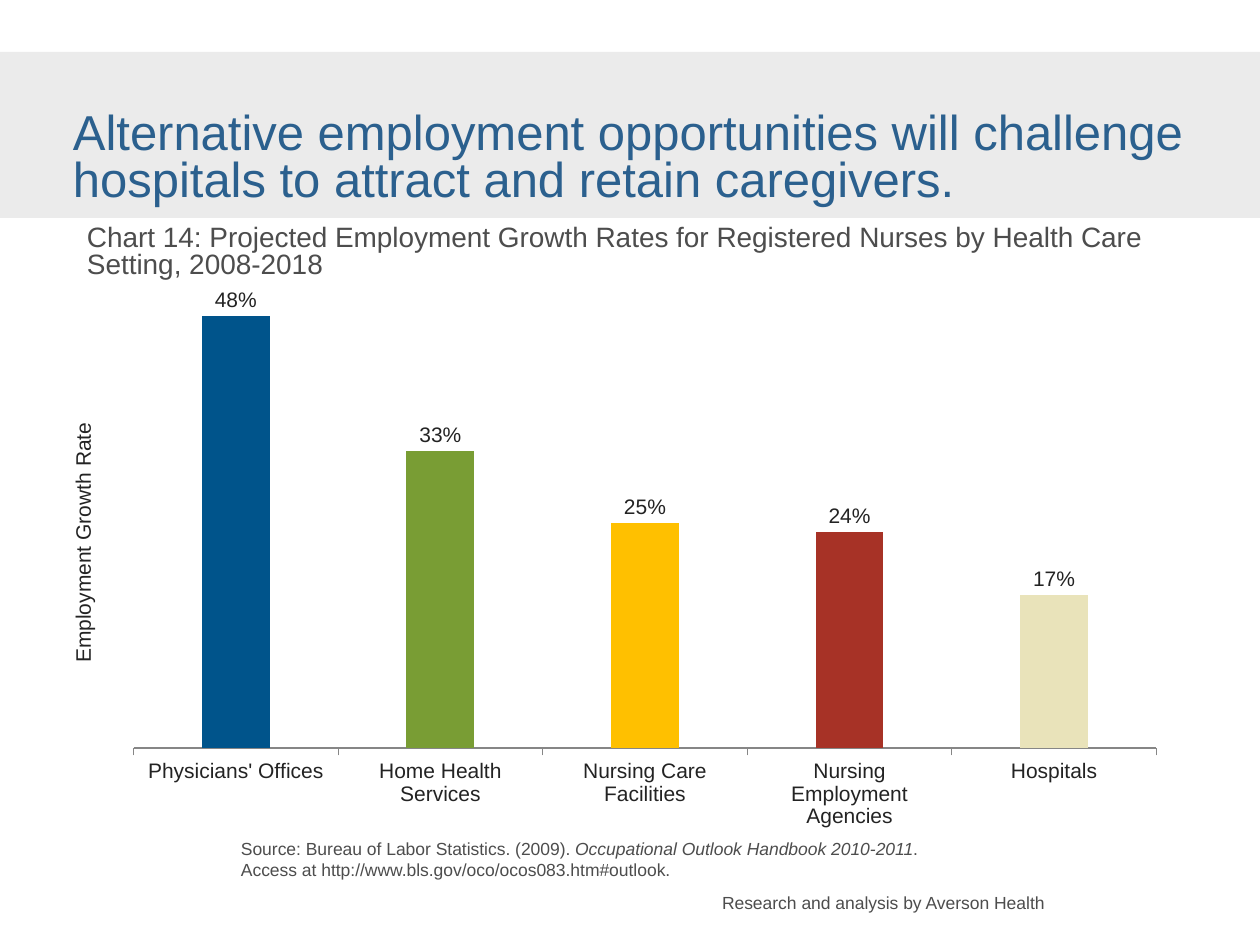
"""Build a slide with a column chart of projected nurse employment growth."""
from lxml import etree
from pptx import Presentation
from pptx.chart.data import CategoryChartData
from pptx.dml.color import RGBColor
from pptx.enum.chart import XL_CHART_TYPE, XL_LABEL_POSITION, XL_TICK_LABEL_POSITION, XL_TICK_MARK
from pptx.enum.shapes import MSO_SHAPE
from pptx.oxml.ns import qn
from pptx.util import Emu, Pt

SCALE = 914400 / 126
GROWTH = {
    "Physicians' Offices": (0.48, "00548B"),
    "Home Health Services": (0.33, "799D34"),
    "Nursing Care Facilities": (0.25, "FFC000"),
    "Nursing Employment Agencies": (0.24, "A73226"),
    "Hospitals": (0.17, "E9E3BA"),
}
TEXTS = [
    ((73, 113, 1134, 95), 28, "2B608E", 0.8,
     [("Alternative employment opportunities will challenge hospitals to attract and retain caregivers.", False)]),
    ((87, 226, 1106, 54), 16, "4D4D4D", 0.8,
     [("Chart 14: Projected Employment Growth Rates for Registered Nurses by Health Care Setting, 2008-2018", False)]),
    ((241, 838, 716, 43), 10, "4D4D4D", 1.0,
     [("Source: Bureau of Labor Statistics. (2009). ", False),
      ("Occupational Outlook Handbook 2010-2011", True),
      (". Access at http://www.bls.gov/oco/ocos083.htm#outlook.", False)]),
    ((722, 892, 333, 21), 10, "4D4D4D", 1.0,
     [("Research and analysis by Averson Health", False)]),
]


def color(value):
    return RGBColor.from_string(value)


def set_layout(element, **values):
    layout = element.find(qn("c:layout"))
    if layout is None:
        layout = etree.Element(qn("c:layout"))
        text = element.find(qn("c:tx"))
        if text is None:
            element.insert(0, layout)
        else:
            text.addnext(layout)
    manual = etree.SubElement(layout, qn("c:manualLayout"))
    for name, value in values.items():
        etree.SubElement(manual, qn(f"c:{name}")).set("val", str(value))


presentation = Presentation()
presentation.slide_width = Emu(round(1260 * SCALE))
presentation.slide_height = Emu(round(945 * SCALE))
slide = presentation.slides.add_slide(presentation.slide_layouts[6])

band = slide.shapes.add_shape(MSO_SHAPE.RECTANGLE, *[Emu(round(n * SCALE)) for n in (0, 52, 1260, 166)])
band.shadow.inherit = False
band.fill.solid()
band.fill.fore_color.rgb = color("EBEBEB")
band.line.fill.background()

for box, size, text_color, spacing, runs in TEXTS:
    shape = slide.shapes.add_textbox(*[Emu(round(n * SCALE)) for n in box])
    frame_format = {"word_wrap": True, "margin_left": 0, "margin_right": 0, "margin_top": 0, "margin_bottom": 0}
    for name, value in frame_format.items():
        setattr(shape.text_frame, name, value)
    paragraph = shape.text_frame.paragraphs[0]
    paragraph.line_spacing = spacing
    for text, italic in runs:
        run = paragraph.add_run()
        run.text = text
        for name, value in {"name": "Arial", "size": Pt(size), "italic": italic}.items():
            setattr(run.font, name, value)
        run.font.color.rgb = color(text_color)

chart_data = CategoryChartData(number_format="0%")
chart_data.categories = list(GROWTH)
chart_data.add_series("Series 1", [rate for rate, _ in GROWTH.values()])
chart = slide.shapes.add_chart(
    XL_CHART_TYPE.COLUMN_CLUSTERED, *[Emu(round(n * SCALE)) for n in (55, 287, 1124, 549)], chart_data
).chart
chart.has_legend = False
chart.has_title = False
chart.font.name = "Arial"
chart.font.size = Pt(12)
chart.font.color.rgb = color("232323")
set_layout(chart.plots[0]._element.getparent(), layoutTarget="inner", xMode="edge", yMode="edge",
           x=0.07, y=0.02, w=0.91, h=0.82)

category_axis = chart.category_axis
category_axis.major_tick_mark = XL_TICK_MARK.OUTSIDE
category_axis.format.line.color.rgb = color("868686")
value_axis = chart.value_axis
axis_format = {
    "minimum_scale": 0, "maximum_scale": 0.5, "major_unit": 0.1, "has_major_gridlines": False,
    "major_tick_mark": XL_TICK_MARK.NONE, "tick_label_position": XL_TICK_LABEL_POSITION.NONE,
}
for name, value in axis_format.items():
    setattr(value_axis, name, value)
value_axis.format.line.fill.background()
axis_title = value_axis.axis_title
axis_title.text_frame.text = "Employment Growth Rate"
axis_title.text_frame._txBody.bodyPr.set("rot", "-5400000")
title_font = axis_title.text_frame.paragraphs[0].runs[0].font
for name, value in {"name": "Arial", "size": Pt(12), "bold": False}.items():
    setattr(title_font, name, value)
title_font.color.rgb = color("232323")
set_layout(axis_title._element, xMode="edge", yMode="edge", x=0.01, y=0.24)

plot = chart.plots[0]
for name, value in {"gap_width": 201, "overlap": 1, "vary_by_categories": False, "has_data_labels": True}.items():
    setattr(plot, name, value)
label_format = {
    "show_value": True, "number_format": "0%", "number_format_is_linked": False,
    "position": XL_LABEL_POSITION.OUTSIDE_END,
}
for name, value in label_format.items():
    setattr(plot.data_labels, name, value)
for index, (_, bar_color) in enumerate(GROWTH.values()):
    fill = plot.series[0].points[index].format.fill
    fill.solid()
    fill.fore_color.rgb = color(bar_color)

presentation.save("out.pptx")
